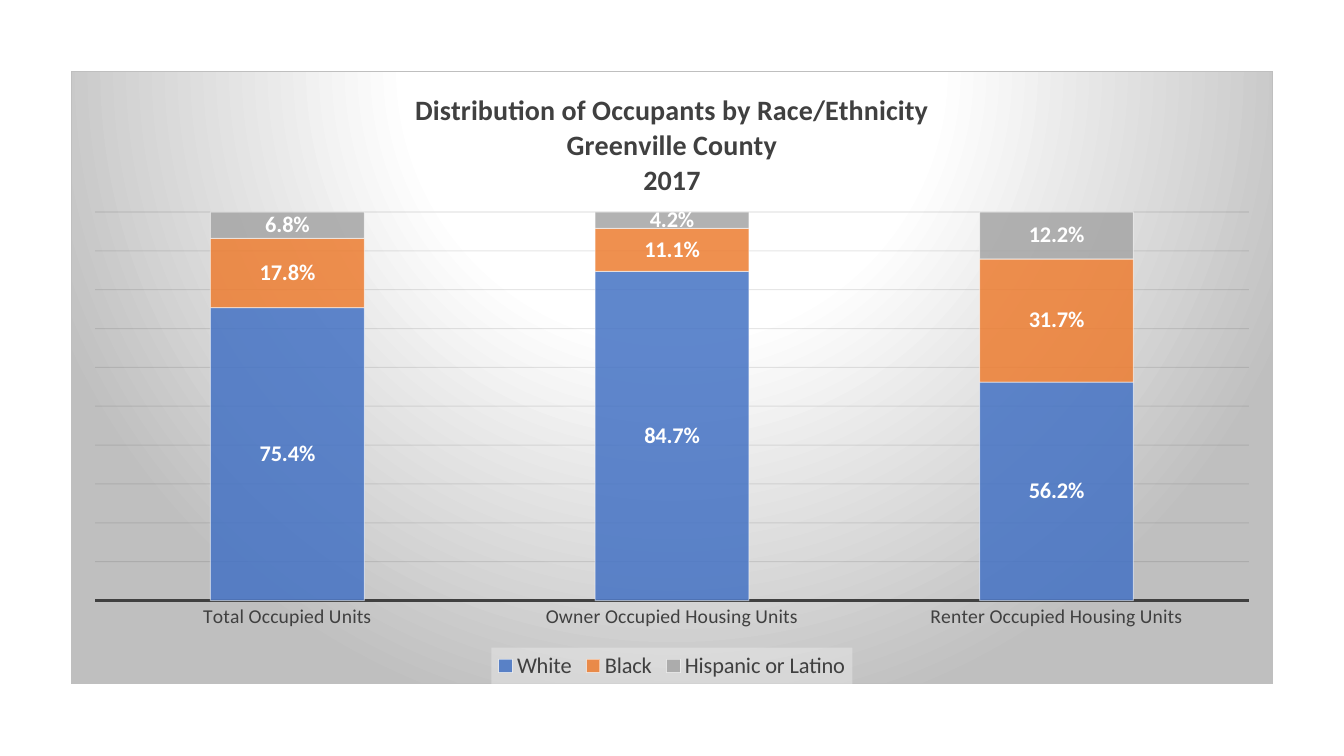
from lxml import etree
from pptx import Presentation
from pptx.chart.data import CategoryChartData
from pptx.dml.color import RGBColor
from pptx.enum.chart import (XL_CHART_TYPE, XL_LABEL_POSITION, XL_LEGEND_POSITION,
                             XL_TICK_LABEL_POSITION, XL_TICK_MARK)
from pptx.oxml import parse_xml
from pptx.oxml.ns import nsdecls, qn
from pptx.util import Inches, Pt

STACKED = XL_CHART_TYPE.COLUMN_STACKED
NO_TICK = XL_TICK_MARK.NONE
PERCENT = "0.0%"
DARK = "404040"


def style_font(font, size, color=DARK, bold=False):
    font.name, font.size, font.bold = "Calibri", Pt(size), bold
    font.color.rgb = RGBColor.from_string(color)


def set_alpha(element, percent):
    for color in element.iter(qn("a:srgbClr")):
        etree.SubElement(color, qn("a:alpha")).set("val", str(percent * 1000))


deck = Presentation()
deck.slide_width, deck.slide_height = Inches(13.33), Inches(7.5)
page = deck.slides.add_slide(deck.slide_layouts[6])

# Data
shares = {
    "White": ("4472C4", (0.754, 0.847, 0.562)),
    "Black": ("ED7D31", (0.178, 0.111, 0.317)),
    "Hispanic or Latino": ("A5A5A5", (0.068, 0.042, 0.122)),
}
data = CategoryChartData(number_format=PERCENT)
data.categories = ["Total Occupied Units", "Owner Occupied Housing Units",
                   "Renter Occupied Housing Units"]
for group, (color, values) in shares.items():
    data.add_series(group, values)

chart = page.shapes.add_chart(STACKED, Inches(0.7), Inches(0.7), Inches(11.93),
                              Inches(6.09), data).chart
style_font(chart.font, 16, "000000")

# Title
title_lines = ["Distribution of Occupants by Race/Ethnicity", "Greenville County", "2017"]
chart.has_title = True
title_frame = chart.chart_title.text_frame
for number, line in enumerate(title_lines):
    para = title_frame.add_paragraph() if number else title_frame.paragraphs[0]
    span = para.add_run()
    span.text = line
    style_font(span.font, 20, bold=True)
chart.chart_title.include_in_layout = False

# Columns and their labels
plot = chart.plots[0]
plot.gap_width, plot.overlap = 150, 100
plot.vary_by_categories = False
for series, (color, values) in zip(plot.series, shares.values()):
    series.format.fill.solid()
    series.format.fill.fore_color.rgb = RGBColor.from_string(color)
    series.format.line.width = Pt(0.75)
    series.format.line.color.rgb = RGBColor.from_string("FFFFFF")
    properties = series._element.find(qn("c:spPr"))
    set_alpha(properties.find(qn("a:solidFill")), 85)
    set_alpha(properties.find(qn("a:ln")), 50)
    labels = series.data_labels
    labels.show_value = True
    labels.position = XL_LABEL_POSITION.CENTER
    labels.number_format, labels.number_format_is_linked = PERCENT, False
    style_font(labels.font, 16, "FFFFFF", bold=True)

# Axes
category_axis = chart.category_axis
category_axis.major_tick_mark = NO_TICK
category_axis.format.line.width = Pt(1.5)
category_axis.format.line.color.rgb = RGBColor.from_string(DARK)
style_font(category_axis.tick_labels.font, 14)

value_axis = chart.value_axis
value_axis.minimum_scale, value_axis.maximum_scale, value_axis.major_unit = 0, 1, 0.1
value_axis.major_tick_mark = NO_TICK
value_axis.tick_label_position = XL_TICK_LABEL_POSITION.NONE
value_axis.tick_labels.number_format = PERCENT
value_axis.tick_labels.number_format_is_linked = False
value_axis.visible = False
value_axis.has_major_gridlines = True
grid = value_axis.major_gridlines
grid.format.line.width = Pt(0.75)
grid.format.line.color.rgb = RGBColor.from_string("0D0D0D")
set_alpha(value_axis._element.find(qn("c:majorGridlines")), 10)

# Legend on a pale panel
chart.has_legend = True
legend = chart.legend
legend.position = XL_LEGEND_POSITION.BOTTOM
legend.include_in_layout = False
style_font(legend.font, 16)
panel = parse_xml(f'<c:spPr {nsdecls("c", "a")}><a:solidFill><a:srgbClr val="F2F2F2"/>'
                  '</a:solidFill><a:ln><a:noFill/></a:ln></c:spPr>')
set_alpha(panel, 39)
legend._element.find(qn("c:overlay")).addnext(panel)

# Plot area position, as shares of the chart
plot_area = chart._chartSpace.chart.plotArea
for old_layout in plot_area.findall(qn("c:layout")):
    plot_area.remove(old_layout)
plot_area.insert(0, parse_xml(
    f'<c:layout {nsdecls("c")}><c:manualLayout><c:layoutTarget val="inner"/>'
    '<c:xMode val="edge"/><c:yMode val="edge"/><c:x val="0.02"/><c:y val="0.23"/>'
    '<c:w val="0.96"/><c:h val="0.634"/></c:manualLayout></c:layout>'))

# Chart background: circular gradient from white to grey
stops = "".join(f'<a:gs pos="{position * 1000}"><a:srgbClr val="{color}"/></a:gs>'
                for position, color in [(0, "FFFFFF"), (39, "FFFFFF"), (100, "BFBFBF")])
chart._chartSpace.chart.addnext(parse_xml(
    f'<c:spPr {nsdecls("c", "a")}><a:gradFill><a:gsLst>{stops}</a:gsLst>'
    '<a:path path="circle"><a:fillToRect l="50000" t="-80000" r="50000" b="180000"/></a:path>'
    '</a:gradFill><a:ln w="9525"><a:solidFill><a:srgbClr val="BFBFBF"/></a:solidFill></a:ln>'
    '</c:spPr>'))

deck.save("out.pptx")
